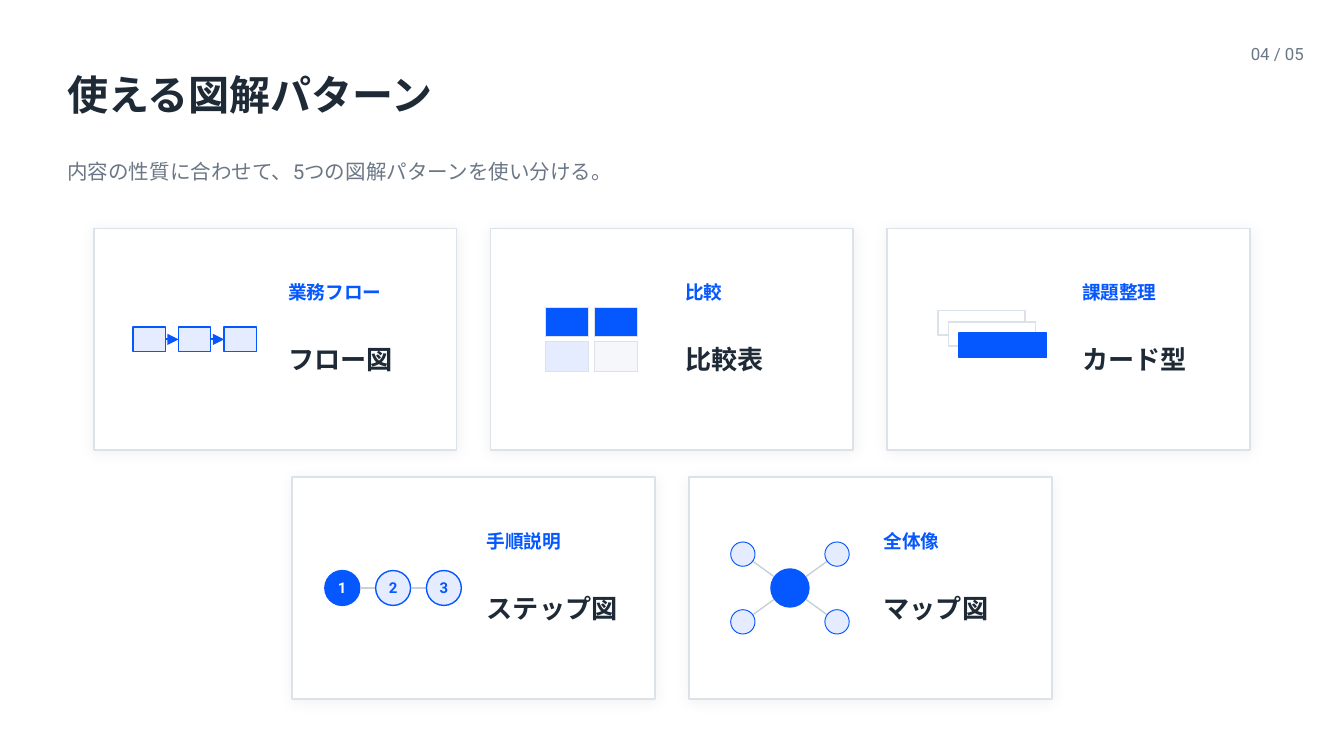
from pptx import Presentation
from pptx.dml.color import RGBColor
from pptx.enum.shapes import MSO_CONNECTOR, MSO_SHAPE
from pptx.enum.text import MSO_ANCHOR, PP_ALIGN
from pptx.oxml import parse_xml
from pptx.oxml.ns import nsdecls
from pptx.util import Cm, Pt

RECT, OVAL = MSO_SHAPE.RECTANGLE, MSO_SHAPE.OVAL
STRAIGHT = MSO_CONNECTOR.STRAIGHT
MIDDLE = MSO_ANCHOR.MIDDLE
LEFT, CENTER, RIGHT = PP_ALIGN.LEFT, PP_ALIGN.CENTER, PP_ALIGN.RIGHT

WHITE = RGBColor(0xFF, 0xFF, 0xFF)
INK = RGBColor(0x1F, 0x2A, 0x37)
GRAY = RGBColor(0x6B, 0x77, 0x85)
BLUE = RGBColor(0x05, 0x57, 0xFF)
PALE_BLUE = RGBColor(0xE6, 0xEC, 0xFF)
PALE_GRAY = RGBColor(0xF5, 0xF7, 0xFA)
BORDER = RGBColor(0xDC, 0xE2, 0xEA)
LINK = RGBColor(0xC7, 0xCF, 0xDB)
FONT = "Roboto"

# Content
PAGE_NUMBER = "04 / 05"
TITLE = "使える図解パターン"
LEAD = "内容の性質に合わせて、5つの図解パターンを使い分ける。"
ROWS = [
    [("業務フロー", "フロー図", "flow"), ("比較", "比較表", "table"),
     ("課題整理", "カード型", "stack")],
    [("手順説明", "ステップ図", "steps"), ("全体像", "マップ図", "map")],
]

# Layout in centimetres
SLIDE_W, SLIDE_H = 25.4, 14.29
CARD_W, CARD_H = 6.86, 4.19
GAP_X, GAP_Y = 0.64, 0.51
CARDS_TOP = 4.32
ICON_X = 1.91
LABEL_X, LABEL_W = 3.68, 2.79

deck = Presentation()
deck.slide_width, deck.slide_height = Cm(SLIDE_W), Cm(SLIDE_H)
slide = deck.slides.add_slide(deck.slide_layouts[6])
shapes = slide.shapes


def write(shape, text, size, color, bold=False, align=LEFT):
    frame = shape.text_frame
    frame.word_wrap = True
    frame.vertical_anchor = MIDDLE
    frame.margin_left = frame.margin_right = 0
    frame.margin_top = frame.margin_bottom = 0
    para = frame.paragraphs[0]
    para.alignment = align
    span = para.add_run()
    span.text = text
    span.font.name, span.font.size = FONT, Pt(size)
    span.font.bold, span.font.color.rgb = bold, color


def add_text(x, y, w, h, *text_style, **options):
    box = shapes.add_textbox(Cm(x), Cm(y), Cm(w), Cm(h))
    write(box, *text_style, **options)


def add_centered(kind, cx, cy, w, h, fill, line, weight):
    shape = shapes.add_shape(kind, Cm(cx - w / 2), Cm(cy - h / 2), Cm(w), Cm(h))
    shape.shadow.inherit = False
    shape.fill.solid()
    shape.fill.fore_color.rgb = fill
    shape.line.color.rgb = line
    shape.line.width = Pt(weight)
    return shape


def add_line(x1, y1, x2, y2, color, weight, arrow=False):
    line = shapes.add_connector(STRAIGHT, Cm(x1), Cm(y1), Cm(x2), Cm(y2))
    line.line.color.rgb = color
    line.line.width = Pt(weight)
    line._element.spPr.append(parse_xml(f'<a:effectLst {nsdecls("a")}/>'))
    if arrow:
        line.line._get_or_add_ln().append(
            parse_xml(f'<a:tailEnd {nsdecls("a")} type="triangle"/>'))
    return line


def add_soft_shadow(shape):
    effects = shape._element.spPr.find(
        "{http://schemas.openxmlformats.org/drawingml/2006/main}effectLst")
    effects.append(parse_xml(
        f'<a:outerShdw {nsdecls("a")} blurRad="{Pt(8)}" dist="{Pt(1)}" '
        'dir="5400000" algn="bl" rotWithShape="0"><a:srgbClr val="000000">'
        '<a:alpha val="6000"/></a:srgbClr></a:outerShdw>'))


# Icons, each drawn around its centre
def draw_flow(cx, cy):
    w, h, pitch = 0.61, 0.46, 0.86
    boxes = [add_centered(RECT, cx + i * pitch, cy, w, h, PALE_BLUE, BLUE, 0.75)
             for i in (-1, 0, 1)]
    for before, after in zip(boxes, boxes[1:]):
        arrow = add_line(cx, cy, cx, cy, BLUE, 1, arrow=True)
        arrow.begin_connect(before, 3)
        arrow.end_connect(after, 1)


def draw_table(cx, cy):
    for row, fills in enumerate([(BLUE, BLUE), (PALE_BLUE, PALE_GRAY)]):
        for col, fill in enumerate(fills):
            add_centered(RECT, cx + (col - 0.5) * 0.92, cy + (row - 0.5) * 0.65,
                         0.81, 0.56, fill, BORDER, 0.5)


def draw_stack(cx, cy):
    for i, (fill, line) in enumerate([(WHITE, BORDER), (WHITE, BORDER), (BLUE, BLUE)]):
        add_centered(RECT, cx - 0.13 + i * 0.2, cy - 0.31 + i * 0.21,
                     1.65, 0.46, fill, line, 0.75)


def draw_steps(cx, cy):
    size, pitch = 0.66, 0.96
    styles = [(BLUE, WHITE), (PALE_BLUE, BLUE), (PALE_BLUE, BLUE)]
    for i, (fill, color) in enumerate(styles):
        x = cx + (i - 1) * pitch
        if i:
            add_line(x - pitch + size / 2, cy, x - size / 2, cy, LINK, 1)
        dot = add_centered(OVAL, x, cy, size, size, fill, BLUE, 0.75)
        write(dot, str(i + 1), 8, color, bold=True, align=CENTER)


def draw_map(cx, cy):
    nodes = [(cx + dx, cy + dy) for dy in (-0.64, 0.64) for dx in (-0.89, 0.89)]
    # Spokes lie behind the hub and the outer circles
    for x, y in nodes:
        add_line(cx, cy, x, y, LINK, 0.75)
    add_centered(OVAL, cx, cy, 0.71, 0.71, BLUE, BLUE, 1)
    for x, y in nodes:
        add_centered(OVAL, x, y, 0.46, 0.46, PALE_BLUE, BLUE, 0.5)


ICONS = {"flow": draw_flow, "table": draw_table, "stack": draw_stack,
         "steps": draw_steps, "map": draw_map}

# Header
add_text(22.1, 0.64, 2.54, 0.76, PAGE_NUMBER, 9, GRAY, align=RIGHT)
add_text(1.27, 0.89, 20.32, 1.78, TITLE, 22, INK, bold=True)
add_text(1.27, 2.67, 22.86, 1.14, LEAD, 11, GRAY)

# Cards, each row centred on the slide
for row, cards in enumerate(ROWS):
    top = CARDS_TOP + row * (CARD_H + GAP_Y)
    row_w = len(cards) * (CARD_W + GAP_X) - GAP_X
    for col, (use, name, icon) in enumerate(cards):
        left = (SLIDE_W - row_w) / 2 + col * (CARD_W + GAP_X)
        middle = top + CARD_H / 2
        card = add_centered(RECT, left + CARD_W / 2, middle, CARD_W, CARD_H,
                            WHITE, BORDER, 1)
        add_soft_shadow(card)
        ICONS[icon](left + ICON_X, middle)
        add_text(left + LABEL_X, top + 0.76, LABEL_W, 0.89, use, 10, BLUE, bold=True)
        add_text(left + LABEL_X, top + 1.77, LABEL_W, 1.4, name, 14, INK, bold=True)

deck.save("out.pptx")
